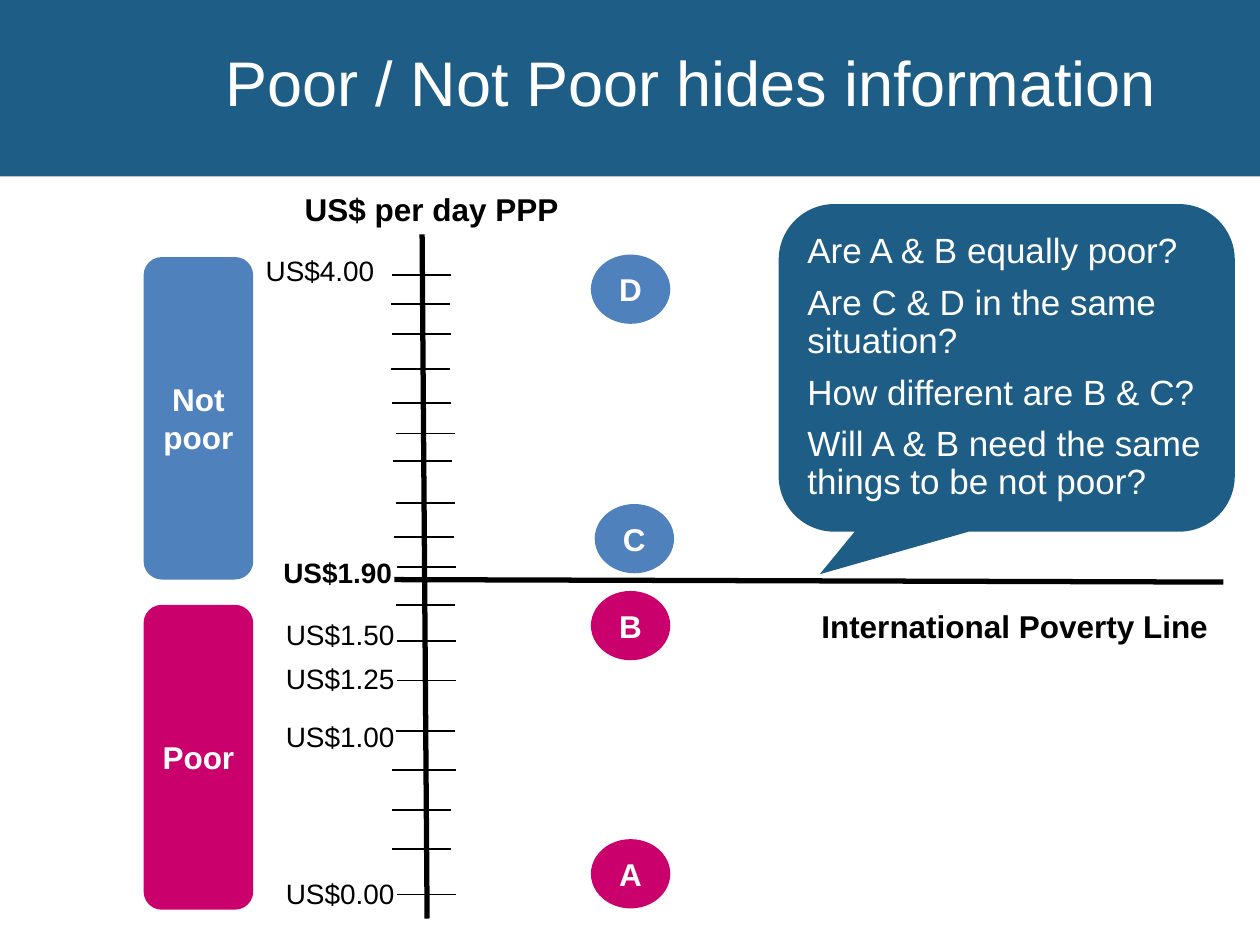
from dataclasses import dataclass
from typing import NamedTuple

from lxml import etree
from pptx import Presentation
from pptx.dml.color import RGBColor
from pptx.enum.shapes import MSO_CONNECTOR, MSO_SHAPE
from pptx.enum.text import MSO_ANCHOR, PP_ALIGN
from pptx.oxml.ns import qn
from pptx.util import Inches, Pt

STRAIGHT = MSO_CONNECTOR.STRAIGHT
RECTANGLE = MSO_SHAPE.RECTANGLE
ROUNDED = MSO_SHAPE.ROUNDED_RECTANGLE
CIRCLE = MSO_SHAPE.FLOWCHART_CONNECTOR
CALLOUT = MSO_SHAPE.ROUNDED_RECTANGULAR_CALLOUT
MIDDLE, TOP = MSO_ANCHOR.MIDDLE, MSO_ANCHOR.TOP
LEFT, CENTER = PP_ALIGN.LEFT, PP_ALIGN.CENTER

SLIDE_WIDTH, SLIDE_HEIGHT = Inches(10), Inches(7.5)
COLUMNS, ROWS = 100, 75


@dataclass(frozen=True)
class Theme:
    font: str = "Arial"
    navy: str = "1E5D85"
    blue: str = "4F81BD"
    magenta: str = "CA006C"
    black: str = "000000"
    white: str = "FFFFFF"
    title_size: int = 36
    question_size: int = 20
    label_size: int = 18
    scale_size: int = 16
    axis_width: int = 3
    tick_width: int = 1


THEME = Theme()


class Area(NamedTuple):
    column: float
    row: float
    columns: float
    rows: float


class Style(NamedTuple):
    size: int
    color: str
    bold: bool = False
    align: int = LEFT
    anchor: int = TOP


class Badge(NamedTuple):
    text: str
    kind: int
    area: Area
    fill: str


class Label(NamedTuple):
    text: str
    area: Area
    style: Style


class Stroke(NamedTuple):
    start_column: float
    start_row: float
    end_column: float
    end_row: float
    width: int


TITLE = Style(THEME.title_size, THEME.white, anchor=MIDDLE)
QUESTION = Style(THEME.question_size, THEME.white, anchor=MIDDLE)
BADGE = Style(THEME.label_size, THEME.white, True, CENTER, MIDDLE)
HEADING = Style(THEME.label_size, THEME.black, True)
SCALE = Style(THEME.scale_size, THEME.black)
POVERTY_LINE = Style(THEME.scale_size, THEME.black, True)

QUESTIONS = [
    "Are A & B equally poor?",
    "Are C & D in the same situation?",
    "How different are B & C?",
    "Will A & B need the same things to be not poor?",
]

BADGES = [
    Badge("Poor", ROUNDED, Area(11.4, 48, 8.7, 24.2), THEME.magenta),
    Badge("Not poor", ROUNDED, Area(11.4, 20.4, 8.7, 25.6), THEME.blue),
] + [
    Badge(letter, CIRCLE, Area(column, row, 6.3, 5.5), fill)
    for letter, column, row, fill in [
        ("D", 46.9, 20.2, THEME.blue),
        ("C", 47.2, 40, THEME.blue),
        ("B", 46.9, 46.9, THEME.magenta),
        ("A", 46.9, 66.6, THEME.magenta),
    ]
]

LABELS = [
    Label("Poor / Not Poor hides information", Area(16.9, 2.9, 82.3, 7.1), TITLE),
    Label("International Poverty Line", Area(64.2, 47.7, 33.9, 4), HEADING),
    Label("US$ per day PPP", Area(23.2, 14.6, 23.6, 4), HEADING),
] + [
    Label(text, Area(column, row, 14.1, 3.7), style)
    for text, column, row, style in [
        ("US$4.00", 20.1, 19.6, SCALE),
        ("US$1.90", 21.5, 43.6, POVERTY_LINE),
        ("US$1.50", 21.7, 48.5, SCALE),
        ("US$1.25", 21.7, 52, SCALE),
        ("US$1.00", 21.7, 56.6, SCALE),
        ("US$0.00", 21.7, 69.1, SCALE),
    ]
]

TICK_LENGTH = 4.7
TICK_ROWS = {
    31: [24.1, 29.3],
    31.1: [21.8, 26.5, 32, 61.1, 64.3, 67.4],
    31.2: [36.6],
    31.3: [42.6],
    31.4: [34.4, 39.9, 48, 58],
    31.5: [45, 50.9, 54, 61.1, 71],
}
STROKES = [
    Stroke(33.5, 18.6, 33.9, 72.9, THEME.axis_width),
    Stroke(97.1, 46.2, 31.3, 46, THEME.axis_width),
] + [
    Stroke(column, row, column + TICK_LENGTH, row, THEME.tick_width)
    for column, rows in TICK_ROWS.items()
    for row in rows
]


def across(columns: float) -> int:
    return round(SLIDE_WIDTH * columns / COLUMNS)


def down(rows: float) -> int:
    return round(SLIDE_HEIGHT * rows / ROWS)


def place(area: Area) -> tuple:
    return across(area.column), down(area.row), across(area.columns), down(area.rows)


def write(box, text: str, style: Style) -> None:
    frame = box.text_frame
    frame.text = text
    frame.word_wrap = True
    frame.vertical_anchor = style.anchor
    for para in frame.paragraphs:
        para.alignment = style.align
        for span in para.runs:
            span.font.name = THEME.font
            span.font.size = Pt(style.size)
            span.font.bold = style.bold
            span.font.color.rgb = RGBColor.from_string(style.color)


def draw_shape(page, kind: int, area: Area, fill: str):
    shape = page.shapes.add_shape(kind, *place(area))
    shape.shadow.inherit = False
    shape.fill.solid()
    shape.fill.fore_color.rgb = RGBColor.from_string(fill)
    shape.line.fill.background()
    return shape


def draw_callout(page) -> None:
    callout = draw_shape(page, CALLOUT, Area(61.8, 16.2, 36.2, 26), THEME.navy)
    for index, value in enumerate([-0.41, 0.63, 0.17]):
        callout.adjustments[index] = value
    write(callout, "\n".join(QUESTIONS), QUESTION)
    for para in callout.text_frame.paragraphs:
        para.line_spacing = 0.9
        para.space_after = Pt(8)


def draw_stroke(page, stroke: Stroke) -> None:
    line = page.shapes.add_connector(
        STRAIGHT, across(stroke.start_column), down(stroke.start_row),
        across(stroke.end_column), down(stroke.end_row))
    line.line.width = Pt(stroke.width)
    line.line.color.rgb = RGBColor.from_string(THEME.black)
    etree.SubElement(line._element.spPr, qn("a:effectLst"))


def main() -> None:
    deck = Presentation()
    deck.slide_width, deck.slide_height = SLIDE_WIDTH, SLIDE_HEIGHT
    page = deck.slides.add_slide(deck.slide_layouts[6])
    draw_callout(page)
    draw_shape(page, RECTANGLE, Area(0, 0, COLUMNS, 14), THEME.navy)
    for badge in BADGES:
        write(draw_shape(page, badge.kind, badge.area, badge.fill), badge.text, BADGE)
    for stroke in STROKES:
        draw_stroke(page, stroke)
    for label in LABELS:
        write(page.shapes.add_textbox(*place(label.area)), label.text, label.style)
    deck.save("out.pptx")


if __name__ == "__main__":
    main()
